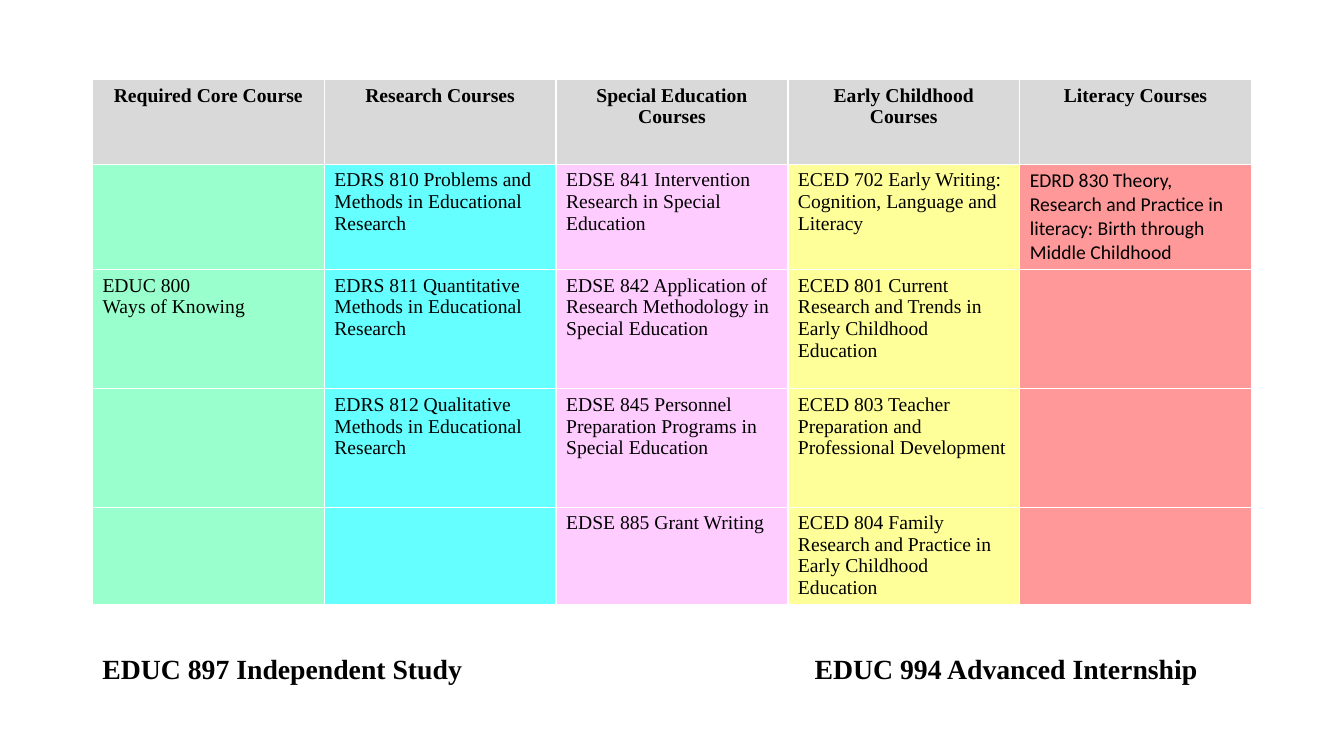
from dataclasses import dataclass

from pptx import Presentation
from pptx.dml.color import RGBColor as Rgb
from pptx.enum.text import MSO_ANCHOR as Anchor, PP_ALIGN as Align
from pptx.util import Cm, Pt


@dataclass(frozen=True)
class Theme:
    serif: str = "Times New Roman"
    sans: str = "Calibri"
    ink: str = "000000"
    header_fill: str = "D9D9D9"
    column_fills: tuple = ("99FFCC", "66FFFF", "FFCCFF", "FFFF99", "FF9999")
    course_size: float = 14
    footer_size: float = 19.8


theme = Theme()


def style_text(frame, font_name, size, bold, align=Align.LEFT):
    for paragraph in frame.paragraphs:
        paragraph.alignment = align
        for run in paragraph.runs:
            run.font.name = font_name
            run.font.size = Pt(size)
            run.font.bold = bold
            run.font.color.rgb = Rgb.from_string(theme.ink)


course_rows = [
    ["Required Core Course", "Research Courses", "Special Education Courses",
     "Early Childhood Courses", "Literacy Courses"],
    ["", "EDRS 810 Problems and Methods in Educational Research",
     "EDSE 841 Intervention Research in Special Education",
     "ECED 702 Early Writing: Cognition, Language and Literacy",
     "EDRD 830 Theory, Research and Practice in literacy: Birth through Middle Childhood"],
    ["EDUC 800\nWays of Knowing",
     "EDRS 811 Quantitative Methods in Educational Research",
     "EDSE 842 Application of Research Methodology in Special Education",
     "ECED 801 Current Research and Trends in Early Childhood Education", ""],
    ["", "EDRS 812 Qualitative Methods in Educational Research",
     "EDSE 845 Personnel Preparation Programs in Special Education",
     "ECED 803 Teacher Preparation and Professional Development", ""],
    ["", "", "EDSE 885 Grant Writing",
     "ECED 804 Family Research and Practice in Early Childhood Education", ""],
]
row_heights = [2.13, 2.65, 3, 2.98, 2.45]
left, top, width = 2.33, 2.01, 29.21
literacy_column = len(theme.column_fills) - 1

deck = Presentation()
deck.slide_width, deck.slide_height = Cm(33.87), Cm(19.05)
slide = deck.slides.add_slide(deck.slide_layouts[6])

courses = slide.shapes.add_table(
    len(course_rows), len(theme.column_fills),
    Cm(left), Cm(top), Cm(width), Cm(sum(row_heights))).table
courses.horz_banding = False

for row_index, (height, titles) in enumerate(zip(row_heights, course_rows)):
    courses.rows[row_index].height = Cm(height)
    is_header = row_index == 0
    for column_index, title in enumerate(titles):
        cell = courses.cell(row_index, column_index)
        fill = theme.header_fill if is_header else theme.column_fills[column_index]
        cell.fill.solid()
        cell.fill.fore_color.rgb = Rgb.from_string(fill)
        if title:
            cell.text_frame.text = title
            is_literacy = column_index == literacy_column and not is_header
            style_text(cell.text_frame, theme.sans if is_literacy else theme.serif,
                       theme.course_size, is_header,
                       Align.CENTER if is_header else Align.LEFT)

for footer_left, course in [(left, "EDUC 897 Independent Study"),
                            (20.28, "EDUC 994 Advanced Internship")]:
    footer = slide.shapes.add_textbox(Cm(footer_left), Cm(16.25), Cm(11), Cm(1.2)).text_frame
    footer.word_wrap = True
    footer.vertical_anchor = Anchor.MIDDLE
    footer.text = course
    style_text(footer, theme.serif, theme.footer_size, True)

deck.save("out.pptx")
